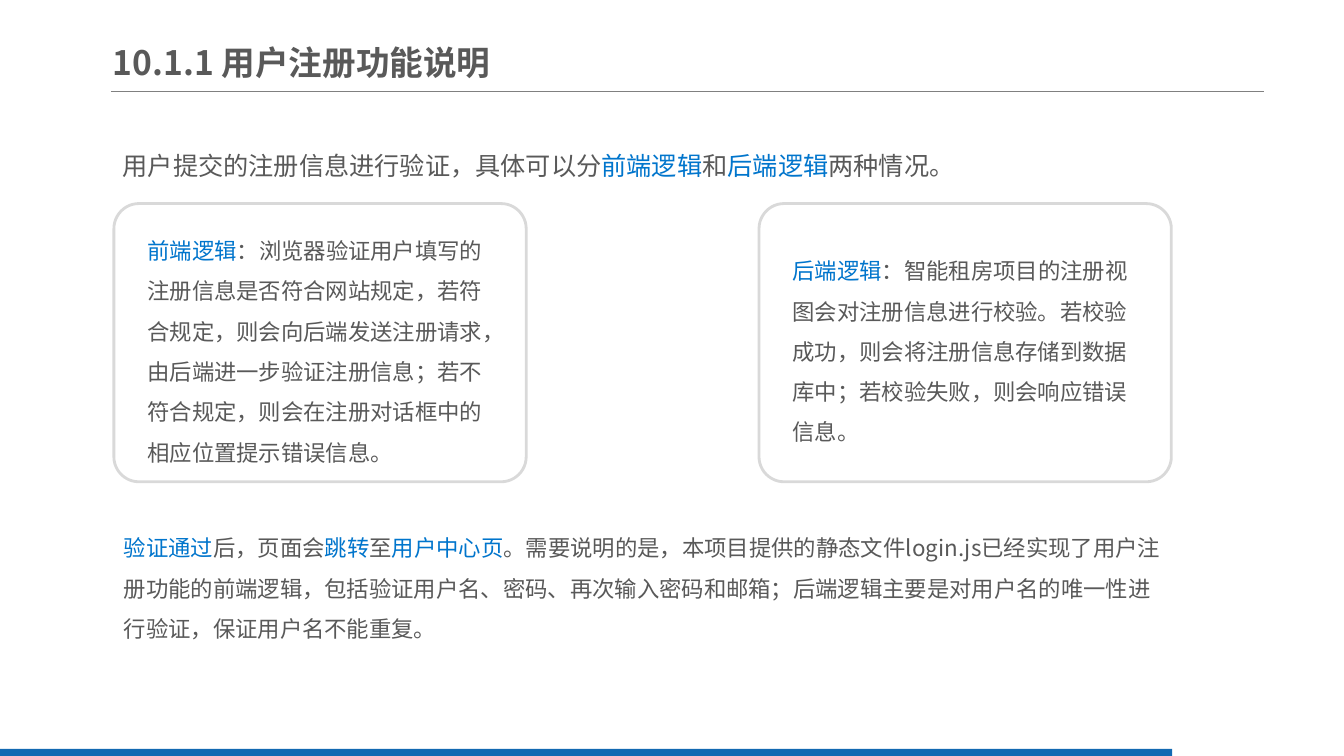
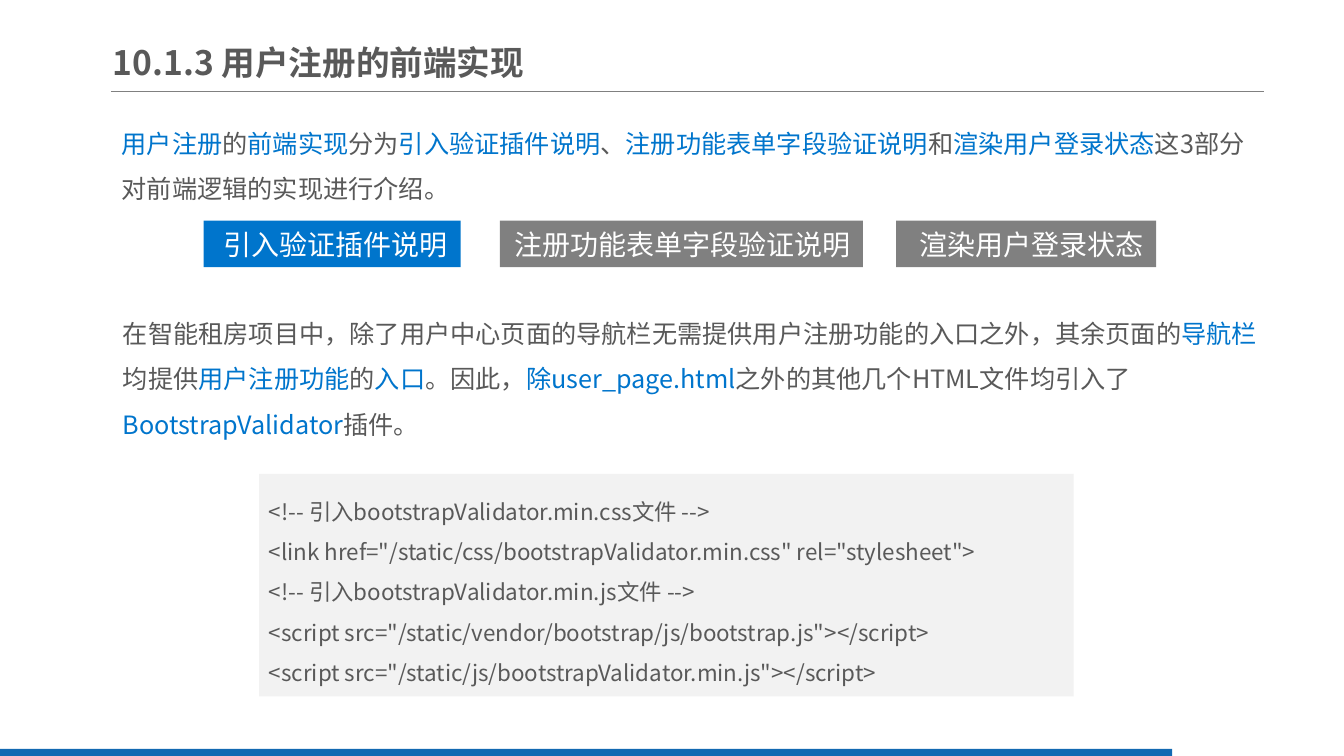
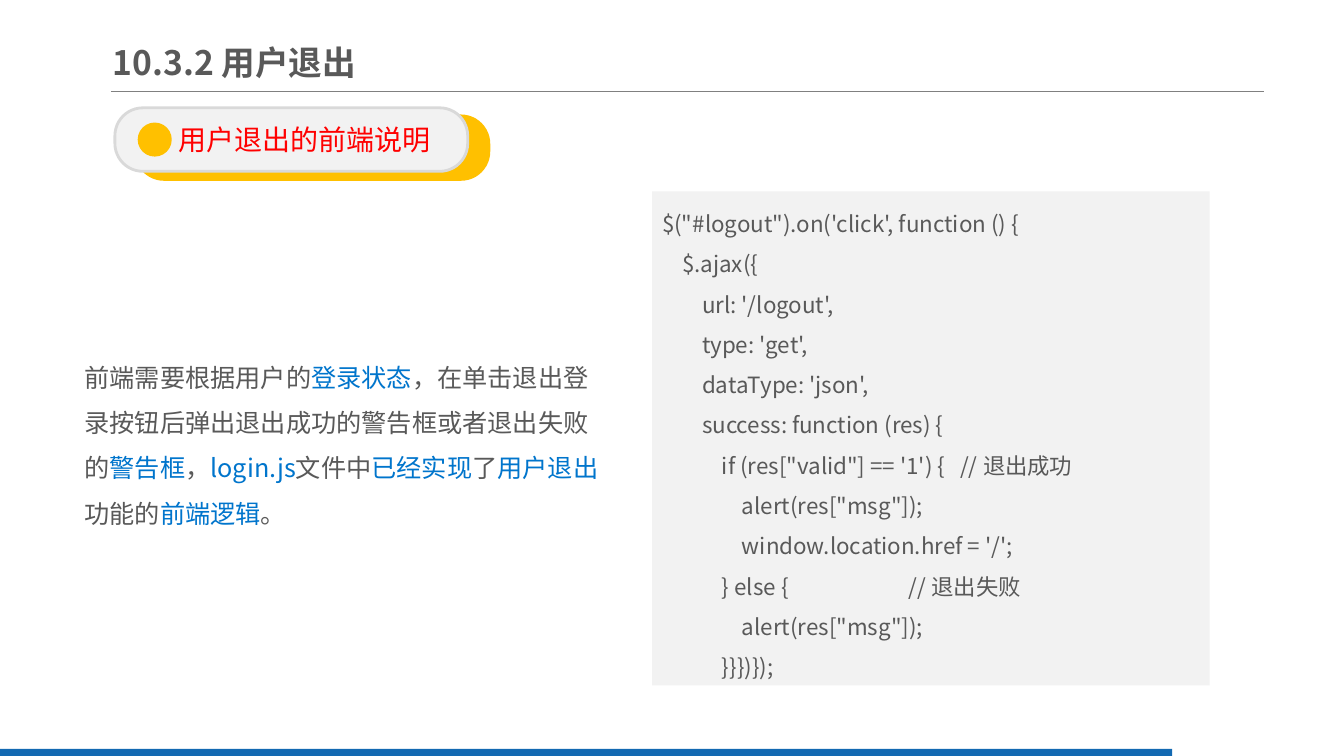
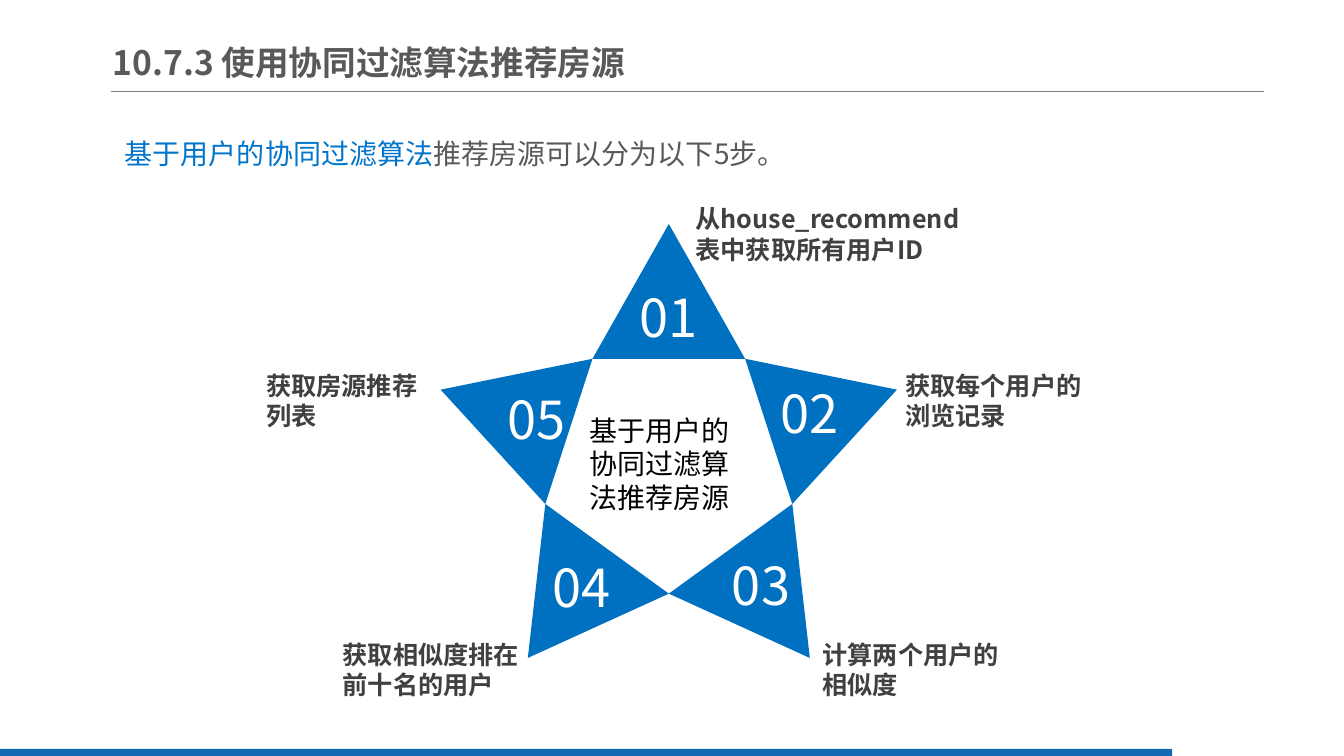
"""Build four slides on user sign-up, sign-out and house recommendation."""
from math import cos, radians, sin

from lxml import etree
from pptx import Presentation
from pptx.dml.color import RGBColor
from pptx.enum.shapes import MSO_CONNECTOR, MSO_SHAPE
from pptx.enum.text import MSO_ANCHOR, PP_ALIGN
from pptx.oxml.ns import qn
from pptx.util import Inches, Pt

RECT, ROUND, OVAL = MSO_SHAPE.RECTANGLE, MSO_SHAPE.ROUNDED_RECTANGLE, MSO_SHAPE.OVAL
LEFT, CENTER = PP_ALIGN.LEFT, PP_ALIGN.CENTER
TOP, MIDDLE = MSO_ANCHOR.TOP, MSO_ANCHOR.MIDDLE
LINE = MSO_CONNECTOR.STRAIGHT

COLS, ROWS = 133.33, 75
FACE = "Noto Sans CJK SC"
BODY, BLUE, STAR, BAND = "595959", "0075CC", "0070C0", "1369B2"
GREY, EDGE, PALE, GOLD = "808080", "D9D9D9", "F2F2F2", "FFC000"
RED, WHITE, DARK, BLACK = "FF0000", "FFFFFF", "404040", "000000"

BASE = dict(size=16, bold=False, color=BODY, align=LEFT, anchor=TOP,
            space=1.5, pad=(1, 0.5, 1, 0.5))
FLAT = dict(space=1, pad=(0, 0, 0, 0))
STYLES = {
    "title": dict(size=24, bold=True, anchor=MIDDLE, space=1, pad=(0, 0.7, 0, 0.7)),
    "note": {},
    "lead": dict(size=18),
    "head": dict(size=20),
    "card": dict(anchor=MIDDLE, pad=(2.6, 0.9, 1.6, 0.5)),
    "code": dict(anchor=MIDDLE),
    "tab": dict(size=20, color=WHITE, align=CENTER, anchor=MIDDLE, space=1),
    "pill": dict(size=20, color=RED, align=CENTER, anchor=MIDDLE, space=1,
                 pad=(3.6, 0.5, 1, 0.5)),
    "digit": dict(FLAT, size=37.4, color=WHITE, align=CENTER),
    "label": dict(FLAT, size=18, bold=True, color=DARK),
    "core": dict(FLAT, size=20, color=BLACK),
}

TITLES = ["10.1.1 用户注册功能说明", "10.1.3 用户注册的前端实现",
          "10.3.2 用户退出", "10.7.3 使用协同过滤算法推荐房源"]

LOGIC = "用户提交的注册信息进行验证，具体可以分|前端逻辑|和|后端逻辑|两种情况。"
CARDS = [
    "|前端逻辑|：浏览器验证用户填写的注册信息是否符合网站规定，若符合规定，则会向后端发送注册请求，"
    "由后端进一步验证注册信息；若不符合规定，则会在注册对话框中的相应位置提示错误信息。",
    "|后端逻辑|：智能租房项目的注册视图会对注册信息进行校验。若校验成功，"
    "则会将注册信息存储到数据库中；若校验失败，则会响应错误信息。",
]
PASSED = ("|验证通过|后，页面会|跳转|至|用户中心页|。需要说明的是，本项目提供的静态文件login.js"
          "已经实现了用户注册功能的前端逻辑，包括验证用户名、密码、再次输入密码和邮箱；"
          "后端逻辑主要是对用户名的唯一性进行验证，保证用户名不能重复。")

PARTS = ("|用户注册|的|前端实现|分为|引入验证插件说明|、|注册功能表单字段验证说明|和"
         "|渲染用户登录状态|这3部分对前端逻辑的实现进行介绍。")
TABS = [("引入验证插件说明", 20.2, 25.5, BLUE, 1.6),
        ("注册功能表单字段验证说明", 49.6, 36, GREY, 1.2),
        ("渲染用户登录状态", 88.9, 25.8, GREY, 2.1)]
ENTRY = ("在智能租房项目中，除了用户中心页面的导航栏无需提供用户注册功能的入口之外，其余页面的"
         "|导航栏|均提供|用户注册功能|的|入口|。因此，|除user_page.html|"
         "之外的其他几个HTML文件均引入了|BootstrapValidator|插件。")
HTML = """<!-- 引⼊bootstrapValidator.min.css⽂件 -->
<link href="/static/css/bootstrapValidator.min.css" rel="stylesheet">
<!-- 引⼊bootstrapValidator.min.js⽂件 -->
<script src="/static/vendor/bootstrap/js/bootstrap.js"></script>
<script src="/static/js/bootstrapValidator.min.js"></script>"""

QUIT = ("前端需要根据用户的|登录状态|，在单击退出登录按钮后弹出退出成功的警告框或者退出失败的"
        "|警告框|，|login.js|文件中|已经实现|了|用户退出|功能的|前端逻辑|。")
AJAX = """$("#logout").on('click', function () {
    $.ajax({
        url: '/logout',
        type: 'get',
        dataType: 'json',
        success: function (res) {
            if (res["valid"] == '1') {   // 退出成功
                alert(res["msg"]);
                window.location.href = '/';
            } else {                        // 退出失败
                alert(res["msg"]);
            }}})});"""

STEPS = "|基于用户的协同过滤算法|推荐房源可以分为以下5步。"
CORE = "基于用户的协同过滤算法推荐房源"
POINTS = [
    ("从house_recommend\n表中获取所有用户ID", (69, 20.2, 28.2), (62.4, 28.3, 7.9)),
    ("获取每个用户的浏览记录", (89.8, 36.7, 18.4), (75.5, 37.8, 9.6)),
    ("计算两个用户的相似度", (81.6, 63.4, 18.4), (71.6, 54.9, 7.8)),
    ("获取相似度排在前十名的用户", (34, 63.4, 17.5), (54.1, 55.1, 7.2)),
    ("获取房源推荐列表", (26.4, 36.7, 15.8), (49.8, 38.4, 6.8)),
]
HUB, INNER, OUTER = (66.35, 46.02), 12.88, 23.8


def unit(num):
    """Turn grid cells of a tenth of an inch into a length."""
    return Inches(num / 10)


def rgb(code):
    """Turn a hex string into a colour."""
    return RGBColor.from_string(code)


def write(shape, text, style, **more):
    """Fill a shape with text; parts between bars are blue."""
    look = {**BASE, **STYLES[style], **more}
    frame = shape.text_frame
    sides = ("margin_left", "margin_top", "margin_right", "margin_bottom")
    form = dict(zip(sides, map(unit, look["pad"])),
                word_wrap=True, vertical_anchor=look["anchor"])
    for key, val in form.items():
        setattr(frame, key, val)
    for row, line in enumerate(text.split("\n")):
        para = frame.add_paragraph() if row else frame.paragraphs[0]
        para.alignment, para.line_spacing = look["align"], look["space"]
        for turn, part in enumerate(line.split("|")):
            if not part:
                continue
            run = para.add_run()
            run.text = part
            font = dict(size=Pt(look["size"]), bold=look["bold"], name=FACE)
            for key, val in font.items():
                setattr(run.font, key, val)
            run.font.color.rgb = rgb(BLUE if turn % 2 else look["color"])
            east = etree.SubElement(run.font._element, qn("a:ea"))
            east.set("typeface", FACE)


def say(slide, box, text, style):
    """Add a text box."""
    write(slide.shapes.add_textbox(*map(unit, box)), text, style)


def paint(shape, fill=None, edge=None):
    """Set fill and outline and drop the shadow."""
    shape.shadow.inherit = False
    if fill:
        shape.fill.solid()
        shape.fill.fore_color.rgb = rgb(fill)
    else:
        shape.fill.background()
    if edge:
        shape.line.color.rgb = rgb(edge)
        shape.line.width = Pt(2)
    else:
        shape.line.fill.background()


def draw(slide, kind, box, fill=None, edge=None, curve=None):
    """Add a preset shape."""
    shape = slide.shapes.add_shape(kind, *map(unit, box))
    paint(shape, fill, edge)
    if curve:
        shape.adjustments[0] = curve
    return shape


def start(deck, title):
    """Add a slide with its rule, band and title."""
    slide = deck.slides.add_slide(deck.slide_layouts[6])
    rule = slide.shapes.add_connector(LINE, *map(unit, (11, 9.1, 125.4, 9.1)))
    rule.line.color.rgb = rgb(GREY)
    rule.line.width = Pt(0.75)
    etree.SubElement(rule._element.spPr, qn("a:effectLst"))
    draw(slide, RECT, (0, 74.3, 116.3, ROWS - 74.3), BAND)
    say(slide, (11.2, 3.4, 53.6, 5.5), title, "title")
    return slide


def rules(slide):
    """Show the two kinds of checks."""
    say(slide, (11.2, 12.9, 96.4, 5.6), LOGIC, "lead")
    for num, text in enumerate(CARDS):
        card = draw(slide, ROUND, (11.3 + 64 * num, 20.2, 40.9, 27.6), None, EDGE, 0.09)
        write(card, text, "card")
    say(slide, (11.3, 51.2, 104.9, 13.1), PASSED, "note")


def front(slide):
    """Show the front-end parts and the page code."""
    say(slide, (11.1, 10.7, 114.6, 10.1), PARTS, "lead")
    for text, left, width, fill, pad in TABS:
        tab = draw(slide, RECT, (left, 21.9, width, 4.6), fill)
        write(tab, text, "tab", pad=(pad, 0.5, 1, 0.5))
    say(slide, (11.2, 29.6, 114.5, 14.6), ENTRY, "lead")
    write(draw(slide, RECT, (25.7, 47, 80.8, 22.1), PALE), HTML, "code")


def leave(slide):
    """Show the sign-out code."""
    draw(slide, ROUND, (13.5, 11.5, 35, 6.3), GOLD, GOLD, 0.44)
    pill = draw(slide, ROUND, (11.4, 10.7, 35, 6.3), PALE, EDGE, 0.44)
    write(pill, "用户退出的前端说明", "pill")
    draw(slide, OVAL, (13.8, 12.3, 3.1, 3.1), GOLD, GOLD)
    say(slide, (7.4, 33.9, 53, 19.2), QUIT, "lead")
    write(draw(slide, RECT, (64.7, 19, 55.3, 49), PALE), AJAX, "code")


def spot(size, turn):
    """Find the point at a clockwise angle from the top of the star."""
    ang = radians(turn)
    return unit(HUB[0] + size * sin(ang)), unit(HUB[1] - size * cos(ang))


def star(slide):
    """Show the five steps around a star."""
    say(slide, (11.4, 11.4, 66.6, 6.1), STEPS, "head")
    for num, (text, label, digit) in enumerate(POINTS):
        turn = 72 * num
        pen = slide.shapes.build_freeform(*spot(OUTER, turn))
        pen.add_line_segments([spot(INNER, turn + 36), spot(INNER, turn - 36)])
        paint(pen.convert_to_shape(), STAR)
        say(slide, (*digit, 6.3), f"{num + 1:02}", "digit")
        say(slide, (*label, 6.1), text, "label")
    say(slide, (58.5, 41, 14.5, 10.1), CORE, "core")


def main():
    """Build and save the deck."""
    deck = Presentation()
    deck.slide_width, deck.slide_height = unit(COLS), unit(ROWS)
    for title, fill in zip(TITLES, (rules, front, leave, star)):
        fill(start(deck, title))
    deck.save("out.pptx")


if __name__ == "__main__":
    main()
